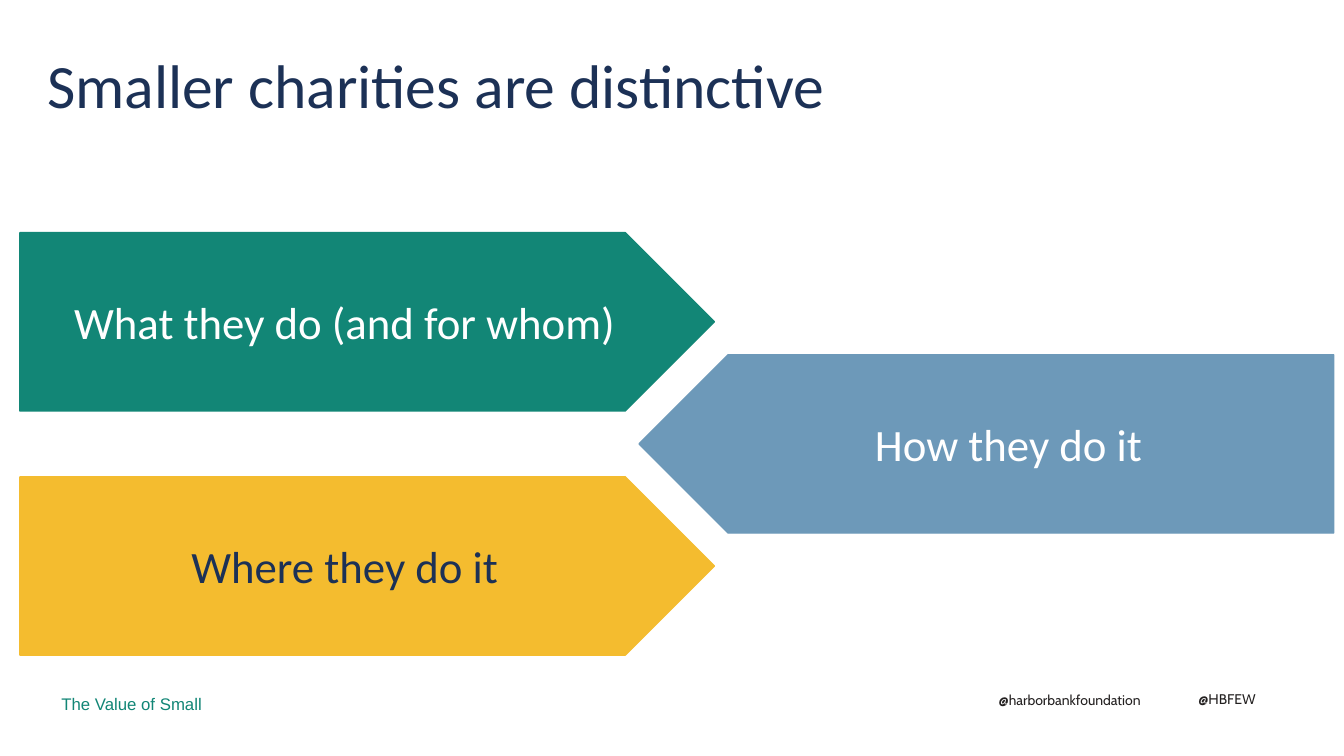
"""Build the slide on what makes smaller charities distinctive."""
from dataclasses import dataclass

import pptx
import pptx.dml.color
import pptx.enum.shapes
import pptx.enum.text
import pptx.util
from pptx.util import Pt


@dataclass(frozen=True)
class Theme:
    """Colours, typefaces and type sizes of the slide."""
    navy: str = "1C3156"
    green: str = "128676"
    blue: str = "6D99B9"
    yellow: str = "F4BC2F"
    white: str = "FFFFFF"
    ink: str = "232020"
    main_font: str = "Calibri"
    footer_font: str = "Arial"
    handle_font: str = "Cabin"
    title_size: int = 44
    arrow_size: int = 32
    footer_size: int = 12
    handle_size: int = 10


THEME = Theme()


def rgb(colour):
    """Return a colour object for a hex value."""
    return pptx.dml.color.RGBColor.from_string(colour)


def write_text(shape, text, font_format, frame_format, paragraph_format):
    """Put one formatted paragraph into a shape."""
    frame = shape.text_frame
    paragraph = frame.paragraphs[0]
    paragraph.text = text
    font = paragraph.runs[0].font
    name, size, colour = font_format
    font.color.rgb = rgb(colour)
    formats = (
        (frame, {"word_wrap": True, **frame_format}),
        (paragraph, paragraph_format),
        (font, {"name": name, "size": Pt(size)}),
    )
    for target, values in formats:
        for attribute, value in values.items():
            setattr(target, attribute, value)


def add_label(slide, box, text, font_format, line_spacing):
    """Add a top-anchored text box."""
    shape = slide.shapes.add_textbox(*map(Pt, box))
    write_text(shape, text, font_format,
               {"vertical_anchor": pptx.enum.text.MSO_ANCHOR.TOP},
               {"line_spacing": line_spacing})


def add_arrow(slide, box, text, fill, text_colour, points_left):
    """Add a pentagon arrow with centred text."""
    shape = slide.shapes.add_shape(
        pptx.enum.shapes.MSO_SHAPE.PENTAGON, *map(Pt, box))
    shape.shadow.inherit = False
    shape.fill.solid()
    shape.fill.fore_color.rgb = rgb(fill)
    shape.line.color.rgb = rgb(fill)
    shape.line.width = Pt(1)
    if points_left:
        shape._element.spPr.xfrm.set("flipH", "1")
    write_text(shape, text, (THEME.main_font, THEME.arrow_size, text_colour),
               {"vertical_anchor": pptx.enum.text.MSO_ANCHOR.MIDDLE},
               {"alignment": pptx.enum.text.PP_ALIGN.CENTER})


def add_arrows(slide, box):
    """Stack interlocking arrows on alternating sides of the box."""
    left, top, width, height = box
    arrow_width, arrow_height = 496.1, 127.4
    arrows = (
        ("What they do (and for whom)", THEME.green, THEME.white),
        ("How they do it", THEME.blue, THEME.white),
        ("Where they do it", THEME.yellow, THEME.navy),
    )
    pitch = (height - arrow_height) / (len(arrows) - 1)
    for index, (text, fill, text_colour) in enumerate(arrows):
        points_left = index % 2 == 1
        arrow_left = left + (width - arrow_width) * points_left
        arrow_box = (arrow_left, top + index * pitch, arrow_width, arrow_height)
        add_arrow(slide, arrow_box, text, fill, text_colour, points_left)


def add_footer(slide, box):
    """Add the report name and the two social handles."""
    left, top, width, height = box
    add_label(slide, (left, top, 350, height), "The Value of Small",
              (THEME.footer_font, THEME.footer_size, THEME.green), 0.9)
    handle_width = 128.9
    handles = (("@harborbankfoundation", 669.6, 1.4), ("@HBFEW", 812.2, 0.7))
    for text, offset, drop in handles:
        add_label(slide, (left + offset, top + drop, handle_width, 14.4), text,
                  (THEME.handle_font, THEME.handle_size, THEME.ink), 0.5)


def main():
    """Build and save the presentation."""
    presentation = pptx.Presentation()
    presentation.slide_width = Pt(960)
    presentation.slide_height = Pt(540)
    slide = presentation.slides.add_slide(presentation.slide_layouts[6])
    add_label(slide, (26.6, 36, 704.2, 59), "Smaller charities are distinctive",
              (THEME.main_font, THEME.title_size, THEME.navy), 0.9)
    add_arrows(slide, (14.2, 166.2, 938.4, 301.8))
    add_footer(slide, (36.7, 493.9, 941.1, 19.4))
    presentation.save("out.pptx")


if __name__ == "__main__":
    main()
